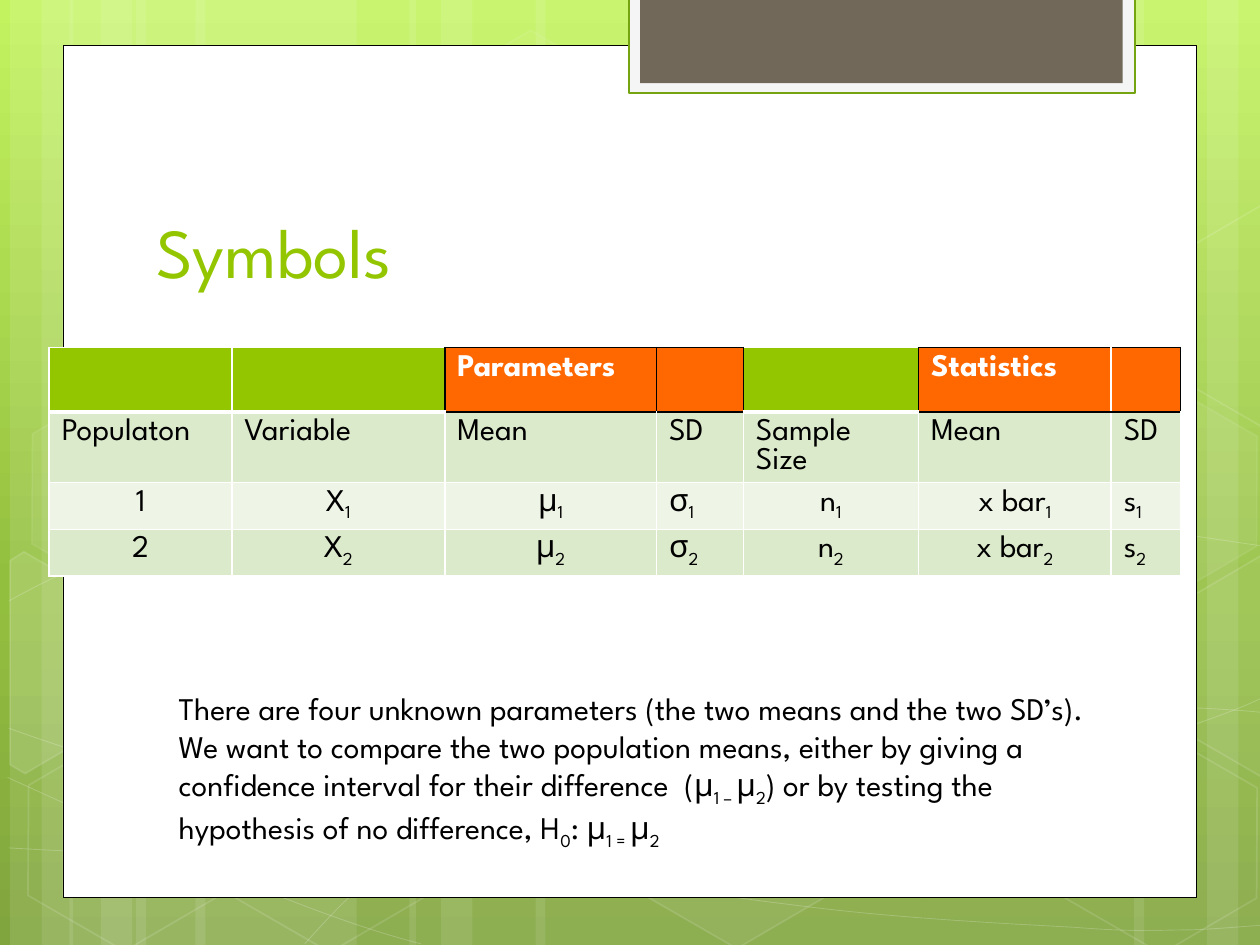
from collections import namedtuple
from copy import deepcopy

from lxml.etree import SubElement
from pptx import Presentation
from pptx.dml.color import RGBColor
from pptx.enum.shapes import MSO_SHAPE
from pptx.enum.text import MSO_ANCHOR, MSO_AUTO_SIZE, PP_ALIGN
from pptx.oxml.ns import qn
from pptx.util import Inches, Pt

Box = namedtuple("Box", "left top width height")
SLIDE = Box(0, 0, 10, 7.5)
FONT = "League Spartan"
WHITE, BLACK, GREEN, ORANGE = "FFFFFF", "000000", "94C600", "FF6700"
PALE, PALER = "DCEACC", "EEF5E7"

SKY = [(0, "C3F35F"), (62, "93BF3F"), (100, "81A53E")]
STRIPES = [
    (1.08, 1.75), (0.08, 0.5), (0.33, 0.83), (1.55, 1.75), (0.55, 0.5), (0.8, 0.83),
    (7.33, 1.75), (9.58, 0.5), (9, 0.83), (4.25, 3.08), (3.25, 0.5), (3.5, 0.83),
]
CURVES = [
    [(0.07, 6.73), (0.61, 6.76), (1.15, 6.79), (1.9, 6.78), (2.65, 6.77), (3.58, 6.75),
     (4.58, 6.65), (5.58, 6.55), (7, 6.36), (7.92, 6.17), (8.83, 5.98), (9.77, 5.68),
     (10.07, 5.51)],
    [(0.07, 4.77), (0.36, 4.61), (0.65, 4.46), (1.21, 4.31), (1.78, 4.16), (2.59, 3.94),
     (3.47, 3.87), (4.36, 3.8), (5.44, 3.79), (6.54, 3.87), (7.64, 3.95), (9.47, 4.26),
     (10.07, 4.34)],
    [(0.06, 6.17), (1.27, 6.72), (2.47, 7.27), (3.34, 7.49)],
    [(0.07, 5.78), (0.38, 5.89), (0.7, 6), (1.28, 6.16), (1.86, 6.31), (2.73, 6.56),
     (3.57, 6.73), (4.4, 6.9), (5.45, 7.08), (6.28, 7.18), (7.11, 7.29), (8, 7.33),
     (8.53, 7.36), (9.05, 7.4), (9.19, 7.38), (9.45, 7.38), (9.71, 7.37), (9.89, 7.35),
     (10.07, 7.34)],
    [(2.42, 7.49), (2.6, 7.29), (2.78, 7.09), (3.02, 6.91), (3.26, 6.73), (3.6, 6.53),
     (3.88, 6.39), (4.16, 6.25), (4.33, 6.19), (4.7, 6.09), (5.06, 5.99), (5.73, 5.85),
     (6.08, 5.78), (6.44, 5.71), (6.49, 5.71), (6.8, 5.69), (7.11, 5.66), (7.6, 5.63),
     (7.94, 5.62), (8.29, 5.61), (8.86, 5.62), (8.86, 5.62), (9.08, 5.62), (9.31, 5.62),
     (9.53, 5.62), (9.71, 5.63), (9.88, 5.64), (9.97, 5.65), (10.06, 5.66), (10.03, 5.65),
     (10.06, 5.66)],
]
HEXAGONS = [
    (3.34, 0.36, 4, 8), (4.97, 5.89, 6, 12), (0.11, 5.91, 0, 12), (0.14, 3.12, 7, 8),
    (1.74, 5.92, 0, 12), (7.53, 4.53, 10, 12), (8.34, 5.93, 0, 12), (8.34, 3.14, 7, 8),
]
CUT_HEXAGONS = [
    ([(0.08, 4.45), (0.19, 4.38), (0.96, 4.82), (0.95, 5.7), (0.2, 6.14), (0.08, 6.07)], 10),
    ([(9.26, 4.85), (10.01, 4.41), (10.09, 4.46), (10.09, 6.13), (10.02, 6.17), (9.26, 5.73)], 4),
    ([(9.26, 2.07), (10.01, 1.63), (10.1, 1.68), (10.09, 3.35), (10.02, 3.39), (9.26, 2.95)], 0),
]

COLUMNS = [1.45, 1.69, 1.68, 0.69, 1.39, 1.53, 0.55]
ROWS = [0.51, 0.51, 0.29, 0.29]
SYMBOLS = [
    ["", "", "Parameters", "", "", "Statistics", ""],
    ["Populaton", "Variable", "Mean", "SD", "Sample Size", "Mean", "SD"],
    ["1", "X|1", "μ|1", "σ|1", "n|1", "x bar|1", "s|1"],
    ["2", "X|2", "μ|2", "σ|2", "n|2", "x bar|2", "s|2"],
]
HIGHLIGHTED = {2, 3, 5, 6}
SD_COLUMNS = {3, 6}
EXPLANATION = (
    "There are four unknown parameters (the two means and the two SD’s).  We want to compare "
    "the two population means, either by giving a confidence interval for their difference  (μ"
    "|1 – |μ|2|) or by testing the hypothesis of no difference, H|0|: μ|1 = |μ|2"
)


def rgb(value):
    """Turn a hex string into a colour."""
    return RGBColor.from_string(value)


def place(box, left, top, width, height):
    """Give the lengths of a part set at grid steps inside a box."""
    return [Inches(step) for step in (box.left + left, box.top + top, width, height)]


def paint(fill, color, opacity=100):
    """Fill with a colour at an opacity in percent, or clear it at zero."""
    if not opacity:
        fill.background()
        return
    fill.solid()
    fill.fore_color.rgb = rgb(color)
    if opacity < 100:
        solid = fill._xPr.find(qn("a:solidFill"))
        SubElement(solid[0], qn("a:alpha"), val=str(opacity * 1000))


def finish(shape, color=WHITE, opacity=100, line=WHITE, weight=1, line_opacity=0):
    """Set the fill and outline of a shape and drop its shadow."""
    shape.shadow.inherit = False
    paint(shape.fill, color, opacity)
    paint(shape.line.fill, line, line_opacity)
    if line_opacity:
        shape.line.width = Pt(weight)


def outline(slide, box, points, close):
    """Draw a freeform through points given in grid steps."""
    placed = [(Inches(box.left + x), Inches(box.top + y)) for x, y in points]
    builder = slide.shapes.build_freeform(*placed[0], scale=1.0)
    builder.add_line_segments(placed[1:], close=close)
    return builder.convert_to_shape()


def bend(shape):
    """Turn every three line segments of a freeform into one cubic curve."""
    segments = list(shape._element.iter(qn("a:lnTo")))
    for start in range(0, len(segments), 3):
        trio = segments[start:start + 3]
        cubic = SubElement(trio[0].getparent(), qn("a:cubicBezTo"))
        for segment in trio:
            cubic.append(segment[0])
            segment.getparent().remove(segment)


def add_backdrop(slide, box):
    """Lay the gradient, stripes, curves and hexagons."""
    sky = slide.background.fill
    sky.gradient()
    sky.gradient_angle = 270
    stops = sky._xPr.find(qn("a:gradFill")).find(qn("a:gsLst"))
    stops.append(deepcopy(stops[0]))
    for stop, (position, color) in zip(sky.gradient_stops, SKY):
        stop.position = position / 100
        stop.color.rgb = rgb(color)
    for left, width in STRIPES:
        stripe = slide.shapes.add_shape(MSO_SHAPE.RECTANGLE, *place(box, left, 0, width, box.height))
        finish(stripe, opacity=10)
    for knots in CURVES:
        curve = outline(slide, box, knots, False)
        bend(curve)
        finish(curve, opacity=0, weight=0.5, line_opacity=20)
    for left, top, opacity, line_opacity in HEXAGONS:
        hexagon = slide.shapes.add_shape(MSO_SHAPE.HEXAGON, *place(box, left, top, 1.75, 1.52))
        hexagon.adjustments[0] = 0.285
        hexagon.rotation = 30
        finish(hexagon, opacity=opacity, line_opacity=line_opacity)
    for corners, opacity in CUT_HEXAGONS:
        finish(outline(slide, box, corners, True), opacity=opacity, line_opacity=12)


def add_card(slide, box):
    """Lay the white card with its tab at the top."""
    card = slide.shapes.add_shape(MSO_SHAPE.RECTANGLE, *place(box, 0, 0, box.width, box.height))
    finish(card, line=BLACK, weight=0.5, line_opacity=100)
    tab = slide.shapes.add_shape(MSO_SHAPE.RECTANGLE, *place(box, 4.49, -0.38, 4.02, 0.76))
    finish(tab, "F5F5F5", line="74A510", weight=1.25, line_opacity=100)
    tab_center = slide.shapes.add_shape(MSO_SHAPE.RECTANGLE, *place(box, 4.58, -0.38, 3.83, 0.68))
    finish(tab_center, "71685A")


def write(paragraph, text, color, size=18, bold=False):
    """Write text whose every second part, split at bars, is a subscript."""
    font = paragraph.font
    font.name, font.size, font.bold = FONT, Pt(size), bold
    font.color.rgb = rgb(color)
    for index, part in enumerate(text.split("|") if text else []):
        run = paragraph.add_run()
        run.text = part
        if index % 2:
            run._r.get_or_add_rPr().set("baseline", "-25000")


def add_text(slide, box, text, color, size=18, anchor=MSO_ANCHOR.TOP):
    """Place one wrapped paragraph in a box."""
    frame = slide.shapes.add_textbox(*place(box, 0, 0, box.width, box.height)).text_frame
    frame.word_wrap = True
    frame.auto_size = MSO_AUTO_SIZE.NONE
    frame.vertical_anchor = anchor
    write(frame.paragraphs[0], text, color, size)


def side_border(row, edge):
    """Choose the upright border at a column edge."""
    touches = {edge - 1, edge} & HIGHLIGHTED
    return (BLACK if row == 0 and touches and edge != 6 else WHITE), 1


def level_border(edge, column):
    """Choose the level border at a row edge."""
    if edge < 2 and column in HIGHLIGHTED:
        return BLACK, 1
    return WHITE, 3 if edge == 1 else 1


def add_symbol_table(slide, box):
    """Lay the table of parameters and statistics."""
    table = slide.shapes.add_table(
        len(ROWS), len(COLUMNS), *place(box, 0, 0, box.width, box.height)).table
    for column, width in zip(table.columns, COLUMNS):
        column.width = Inches(width)
    for row, height in zip(table.rows, ROWS):
        row.height = Inches(height)
    for r, texts in enumerate(SYMBOLS):
        for c, text in enumerate(texts):
            cell = table.cell(r, c)
            borders = {"L": side_border(r, c), "R": side_border(r, c + 1),
                       "T": level_border(r, c), "B": level_border(r + 1, c)}
            for side, (color, weight) in borders.items():
                line = SubElement(cell._tc.get_or_add_tcPr(), qn("a:ln" + side), w=str(Pt(weight)))
                SubElement(SubElement(line, qn("a:solidFill")), qn("a:srgbClr"), val=color)
            header = ORANGE if c in HIGHLIGHTED else GREEN
            paint(cell.fill, (header, PALE, PALER, PALE)[r])
            paragraph = cell.text_frame.paragraphs[0]
            centered = r > 1 and c not in SD_COLUMNS
            paragraph.alignment = PP_ALIGN.CENTER if centered else PP_ALIGN.LEFT
            write(paragraph, text, WHITE if r == 0 else BLACK, bold=r == 0)


def main():
    """Build the slide and save it."""
    deck = Presentation()
    deck.slide_width, deck.slide_height = Inches(SLIDE.width), Inches(SLIDE.height)
    slide = deck.slides.add_slide(deck.slide_layouts[6])
    add_backdrop(slide, SLIDE)
    add_card(slide, Box(0.5, 0.36, 9, 6.76))
    add_text(slide, Box(1.14, 1.12, 7.68, 1.25), "Symbols", GREEN, 40, MSO_ANCHOR.BOTTOM)
    add_symbol_table(slide, Box(0.39, 2.76, sum(COLUMNS), sum(ROWS)))
    add_text(slide, Box(1.32, 5.42, 7.5, 2.22), EXPLANATION, BLACK)
    deck.save("out.pptx")


if __name__ == "__main__":
    main()
